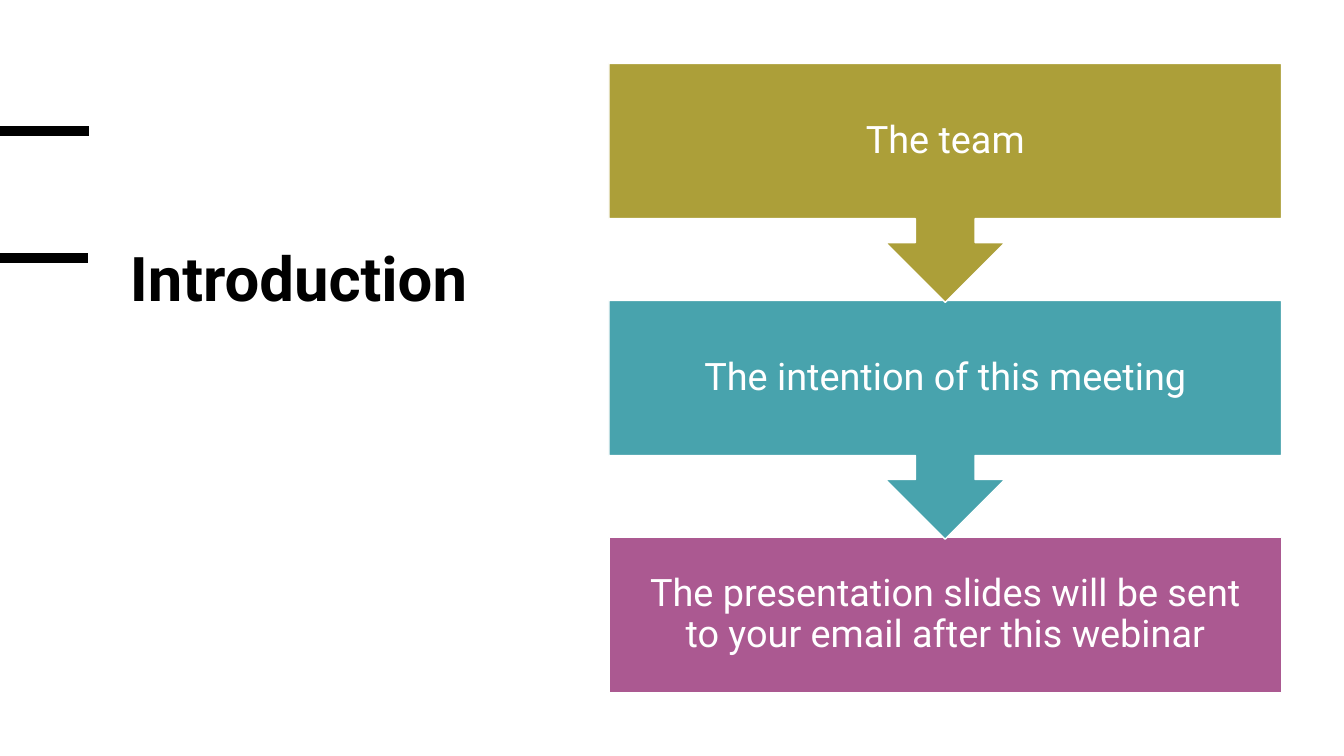
from dataclasses import dataclass

from lxml.etree import SubElement
from pptx import Presentation
from pptx.dml.color import RGBColor
from pptx.enum.shapes import MSO_CONNECTOR, MSO_SHAPE as Shape
from pptx.enum.text import MSO_ANCHOR as Anchor, PP_ALIGN as Align
from pptx.oxml.ns import qn
from pptx.slide import Slide
from pptx.text.text import TextFrame
from pptx.util import Inches, Length, Pt

SLIDE_W, SLIDE_H = Inches(13.33), Inches(7.5)


@dataclass(frozen=True)
class Theme:
    font: str = "Roboto"
    ink: str = "000000"
    paper: str = "FFFFFF"
    olive: str = "AC9F39"
    teal: str = "48A3AD"
    plum: str = "AB5991"
    title_size: float = 44
    step_size: float = 27
    rule_weight: float = 6.75
    outline_weight: float = 1


@dataclass(frozen=True)
class Rule:
    start: float
    end: float
    row: float


@dataclass(frozen=True)
class Step:
    text: str
    color: str
    shape: Shape
    height: float


THEME = Theme()

# Positions are on a grid of 100 columns by 100 rows.
RULES = [Rule(0, 6.6, 17.33), Rule(-0.08, 6.53, 34.13)]
STEP_LEFT, STEP_WIDTH = 45.31, 50.04
STEP_TOP, STEP_PITCH = 8.4, 31.33
BOX_HEIGHT, CALLOUT_HEIGHT = 20.53, 31.6
STEPS = [
    Step("The team", THEME.olive, Shape.DOWN_ARROW_CALLOUT, CALLOUT_HEIGHT),
    Step("The intention of this meeting", THEME.teal,
         Shape.DOWN_ARROW_CALLOUT, CALLOUT_HEIGHT),
    Step("The presentation slides will be sent to your email after this webinar",
         THEME.plum, Shape.RECTANGLE, BOX_HEIGHT),
]


def col(n: float) -> Length:
    return Length(round(SLIDE_W * n / 100))


def row(n: float) -> Length:
    return Length(round(SLIDE_H * n / 100))


def rgb(color: str) -> RGBColor:
    return RGBColor.from_string(color)


def set_text(tf: TextFrame, text: str, size: float, color: str,
             spacing: float, align: Align, bold: bool = False) -> None:
    tf.word_wrap = True
    tf.text = text
    p = tf.paragraphs[0]
    p.alignment, p.line_spacing = align, spacing
    font = p.runs[0].font
    font.name, font.size, font.bold = THEME.font, Pt(size), bold
    font.color.rgb = rgb(color)


def add_rule(slide: Slide, rule: Rule) -> None:
    line = slide.shapes.add_connector(MSO_CONNECTOR.STRAIGHT, col(rule.start),
                                      row(rule.row), col(rule.end), row(rule.row))
    line.line.color.rgb = rgb(THEME.ink)
    line.line.width = Pt(THEME.rule_weight)
    SubElement(line._element.spPr, qn("a:effectLst"))


def add_title(slide: Slide, text: str) -> None:
    sp = slide.shapes.add_textbox(col(8.93), row(32.53), col(31.2), row(48.93))
    set_text(sp.text_frame, text, THEME.title_size, THEME.ink, 0.85,
             Align.LEFT, bold=True)


def add_step(slide: Slide, index: int, step: Step) -> None:
    sp = slide.shapes.add_shape(step.shape, col(STEP_LEFT),
                                row(STEP_TOP + index * STEP_PITCH),
                                col(STEP_WIDTH), row(step.height))
    sp.shadow.inherit = False
    sp.fill.solid()
    sp.fill.fore_color.rgb = rgb(step.color)
    sp.line.color.rgb = rgb(THEME.paper)
    sp.line.width = Pt(THEME.outline_weight)
    tf = sp.text_frame
    tf.vertical_anchor = Anchor.MIDDLE
    tf.margin_left = tf.margin_right = tf.margin_top = tf.margin_bottom = Inches(0.21)
    set_text(tf, step.text, THEME.step_size, THEME.paper, 0.9, Align.CENTER)


def main() -> None:
    prs = Presentation()
    prs.slide_width, prs.slide_height = SLIDE_W, SLIDE_H
    slide = prs.slides.add_slide(prs.slide_layouts[6])
    for rule in RULES:
        add_rule(slide, rule)
    add_title(slide, "Introduction")
    # Bottom step first, so that each arrow tip lies over the next box.
    for index, step in reversed(list(enumerate(STEPS))):
        add_step(slide, index, step)
    prs.save("out.pptx")


if __name__ == "__main__":
    main()
